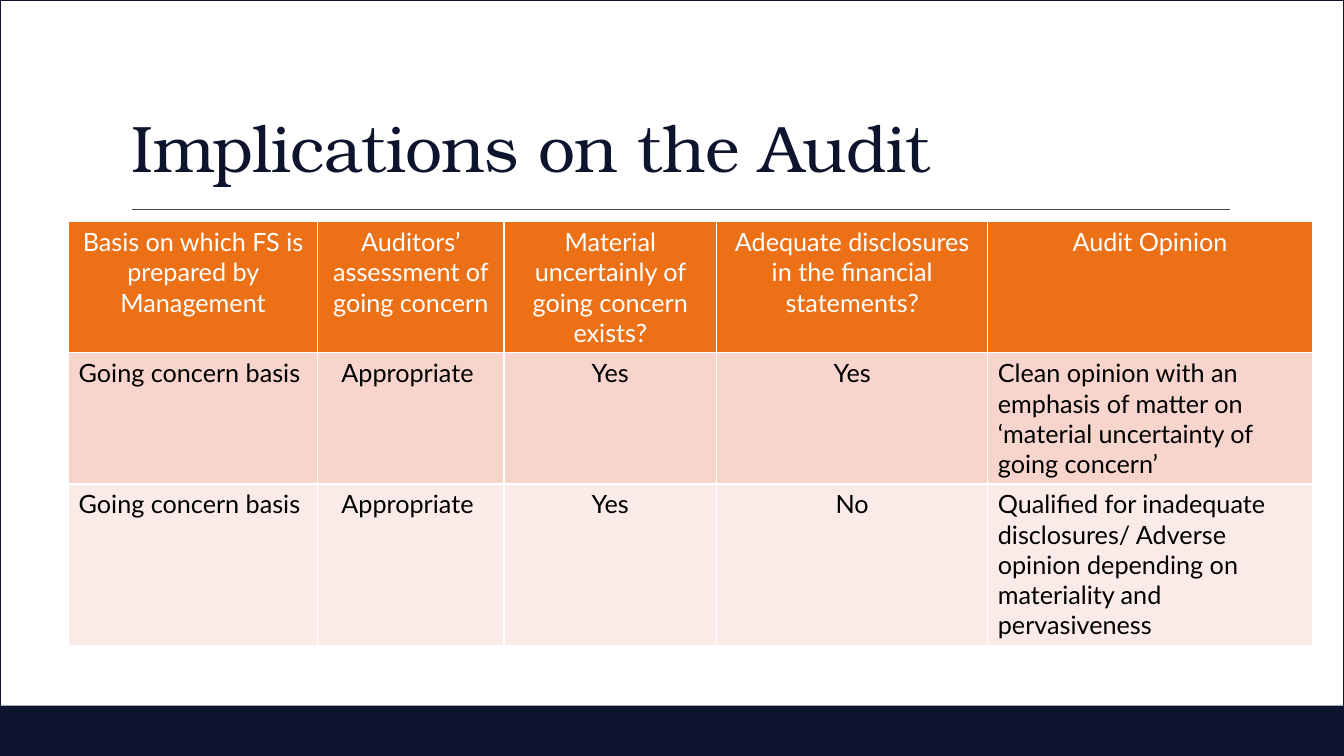
from dataclasses import dataclass

from pptx import Presentation
from pptx.dml.color import RGBColor as Rgb
from pptx.enum import shapes as kinds, text as txt
from pptx.oxml.ns import qn
from pptx.util import Pt
from lxml import etree


@dataclass(frozen=True)
class Theme:
    navy: str = "0E142E"
    rule: str = "404040"
    head: str = "EC7016"
    bands: tuple = ("F8D5CC", "FBEBE8")
    white: str = "FFFFFF"
    black: str = "000000"
    serif: str = "TeX Gyre Bonum"
    sans: str = "Lato"
    title: int = 47
    body: int = 18


THEME = Theme()
WIDE, HIGH = 960, 540
COLS = (177.84, 133.2, 151.92, 193.68, 231.84)
ROWS = (93.6, 93.6, 115.2)
CELLS = (
    ("Basis on which FS is prepared by Management",
     "Auditors’ assessment of going concern",
     "Material uncertainly of going concern exists?",
     "Adequate disclosures in the financial statements?",
     "Audit Opinion"),
    ("Going concern basis", "Appropriate ", "Yes", "Yes",
     "Clean opinion with an emphasis of matter on "
     "‘material uncertainty of going concern’"),
    ("Going concern basis", "Appropriate ", "Yes", "No",
     "Qualified for inadequate disclosures/ Adverse opinion "
     "depending on materiality and pervasiveness"),
)


def color(code):
    return Rgb.from_string(code)


def style(para, face, size, code):
    font = para.font
    font.name, font.size, font.bold = face, Pt(size), False
    font.color.rgb = color(code)


def add_box(slide, x, y, w, h, fill=None, line=None):
    box = slide.shapes.add_shape(
        kinds.MSO_SHAPE.RECTANGLE, Pt(x), Pt(y), Pt(w), Pt(h))
    box.shadow.inherit = False
    if fill:
        box.fill.solid()
        box.fill.fore_color.rgb = color(fill)
    else:
        box.fill.background()
    if line:
        box.line.color.rgb = color(line)
        box.line.width = Pt(1)
    else:
        box.line.fill.background()


def add_rule(slide, x, y, end):
    rule = slide.shapes.add_connector(
        kinds.MSO_CONNECTOR.STRAIGHT, Pt(x), Pt(y), Pt(end), Pt(y))
    rule.line.color.rgb = color(THEME.rule)
    rule.line.width = Pt(1)
    etree.SubElement(rule._element.spPr, qn("a:effectLst"))


def add_title(slide, words, x, y, w, h):
    frame = slide.shapes.add_textbox(Pt(x), Pt(y), Pt(w), Pt(h)).text_frame
    frame.word_wrap = True
    frame.vertical_anchor = txt.MSO_ANCHOR.BOTTOM
    para = frame.paragraphs[0]
    para.line_spacing = 0.9
    run = para.add_run()
    run.text = words
    style(para, THEME.serif, THEME.title, THEME.navy)
    # Letter spacing in hundredths of a point
    run._r.get_or_add_rPr().set("spc", "-50")


def fill_cell(cell, words, fill, ink, align):
    cell.fill.solid()
    cell.fill.fore_color.rgb = color(fill)
    cell.text = words
    para = cell.text_frame.paragraphs[0]
    para.alignment = align
    style(para, THEME.sans, THEME.body, ink)


def add_grid(slide, x, y):
    grid = slide.shapes.add_table(
        len(ROWS), len(COLS), Pt(x), Pt(y), Pt(sum(COLS)), Pt(sum(ROWS))).table
    for col, width in zip(grid.columns, COLS):
        col.width = Pt(width)
    for row, height in zip(grid.rows, ROWS):
        row.height = Pt(height)
    fills = (THEME.head, *THEME.bands)
    for r, line in enumerate(CELLS):
        for c, words in enumerate(line):
            # Outer columns of the body read from the left
            left = r > 0 and c in (0, len(COLS) - 1)
            align = txt.PP_ALIGN.LEFT if left else txt.PP_ALIGN.CENTER
            ink = THEME.black if r else THEME.white
            fill_cell(grid.cell(r, c), words, fills[r], ink, align)


def main():
    deck = Presentation()
    deck.slide_width, deck.slide_height = Pt(WIDE), Pt(HIGH)
    slide = deck.slides.add_slide(deck.slide_layouts[6])

    # Footer band, title rule and page frame
    add_box(slide, 0, 504, WIDE, 36, fill=THEME.navy)
    add_rule(slide, 94.3, 149.5, 878.8)
    add_box(slide, 0, 0, WIDE, HIGH, line=THEME.navy)

    # Title and table
    add_title(slide, "Implications on the Audit", 86.9, 22.5, 792, 114.5)
    add_grid(slide, 49, 158.4)

    deck.save("out.pptx")


if __name__ == "__main__":
    main()
